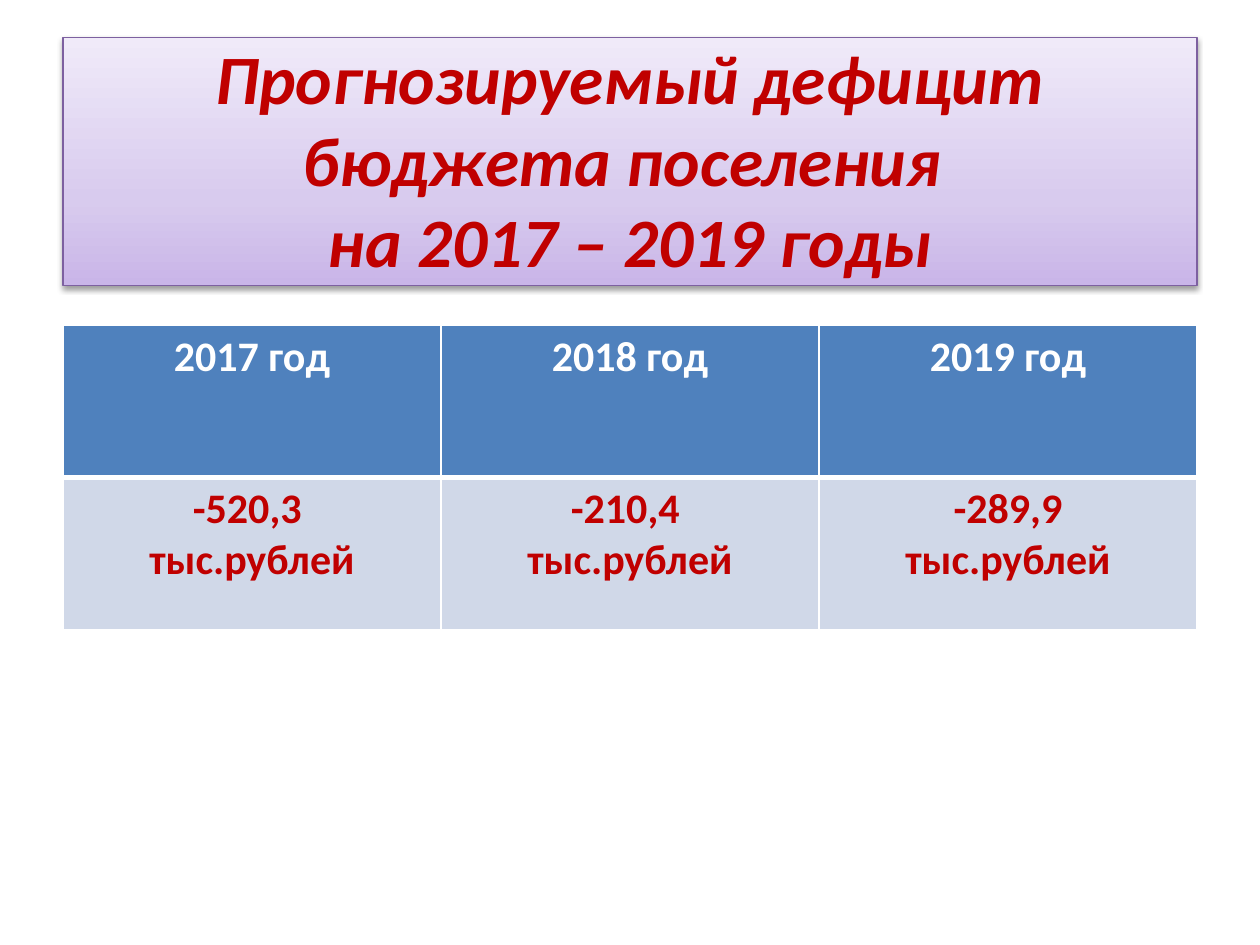
from copy import deepcopy
from dataclasses import dataclass

from lxml import etree
from pptx import Presentation
from pptx import util as u
from pptx.dml.color import RGBColor
from pptx.enum import shapes, text
from pptx.oxml.ns import qn

COLORS = {
    "red": "C00000",
    "white": "FFFFFF",
    "header": "4F81BD",
    "body": "D0D8E8",
    "outline": "7D60A0",
    "shadow": "000000",
}
TITLE_GRADIENT = [(0, "C9B5E8"), (0.35, "D8CBEE"), (1, "F0EAF9")]
FONT = "Calibri"
LEFT, WIDTH = 36, 648
ROW_HEIGHT = 87.1


@dataclass
class TextStyle:
    size: float
    color: str
    italic: bool = False


@dataclass
class RowStyle:
    font: TextStyle
    fill: str
    top: float
    bottom: float


@dataclass
class YearDeficit:
    year: str
    amount: str


HEADER = RowStyle(TextStyle(24, "white"), "header", top=1, bottom=3)
BODY = RowStyle(TextStyle(24, "red"), "body", top=3, bottom=1)
DEFICITS = [
    YearDeficit("2017 год", "-520,3 \nтыс.рублей"),
    YearDeficit("2018 год", "-210,4 \nтыс.рублей"),
    YearDeficit("2019 год", "-289,9\nтыс.рублей"),
]


def rgb(name: str) -> RGBColor:
    return RGBColor.from_string(COLORS[name])


def write(frame, wording: str, style: TextStyle) -> None:
    frame.text = wording
    for para in frame.paragraphs:
        para.alignment = text.PP_ALIGN.CENTER
        for span in para.runs:
            span.font.name = FONT
            span.font.size = u.Pt(style.size)
            span.font.bold = True
            span.font.italic = style.italic
            span.font.color.rgb = rgb(style.color)


def fill_gradient(shape) -> None:
    """Fill upwards through the title's gradient stops."""
    shape.fill.gradient()
    shape.fill.gradient_angle = 90
    stop_list = shape._element.spPr.find(".//" + qn("a:gsLst"))
    stop_list.insert(1, deepcopy(stop_list[0]))
    for stop, (position, color) in zip(shape.fill.gradient_stops, TITLE_GRADIENT):
        stop.position = position
        stop.color.rgb = RGBColor.from_string(color)


def add_shadow(shape) -> None:
    shape.shadow.inherit = False
    effects = shape._element.spPr.find(qn("a:effectLst"))
    outer = etree.SubElement(
        effects, qn("a:outerShdw"), blurRad=str(u.Pt(3.1)), dist=str(u.Pt(1.6)),
        dir="5400000", rotWithShape="0")
    color = etree.SubElement(outer, qn("a:srgbClr"), val=COLORS["shadow"])
    etree.SubElement(color, qn("a:alpha"), val="38000")


def add_title(page, wording: str) -> None:
    box = page.shapes.add_shape(
        shapes.MSO_SHAPE.RECTANGLE, u.Pt(LEFT), u.Pt(21.6), u.Pt(WIDTH), u.Pt(141.8))
    fill_gradient(box)
    box.line.color.rgb = rgb("outline")
    box.line.width = u.Pt(0.75)
    add_shadow(box)
    frame = box.text_frame
    frame.word_wrap = True
    frame.vertical_anchor = text.MSO_ANCHOR.MIDDLE
    write(frame, wording, TextStyle(39.6, "red", italic=True))
    frame.paragraphs[0].line_spacing = 0.98


def add_borders(cell, top: float, bottom: float) -> None:
    properties = cell._tc.get_or_add_tcPr()
    for side, width in (("L", 1), ("R", 1), ("T", top), ("B", bottom)):
        line = etree.SubElement(properties, qn(f"a:ln{side}"), w=str(u.Pt(width)))
        solid = etree.SubElement(line, qn("a:solidFill"))
        etree.SubElement(solid, qn("a:srgbClr"), val=COLORS["white"])


def fill_cell(cell, wording: str, style: RowStyle) -> None:
    write(cell.text_frame, wording, style.font)
    add_borders(cell, style.top, style.bottom)
    cell.fill.solid()
    cell.fill.fore_color.rgb = rgb(style.fill)


def add_deficit_table(page, deficits: list[YearDeficit]) -> None:
    table = page.shapes.add_table(
        2, len(deficits), u.Pt(LEFT), u.Pt(185.8), u.Pt(WIDTH), u.Pt(2 * ROW_HEIGHT)).table
    for column, deficit in enumerate(deficits):
        fill_cell(table.cell(0, column), deficit.year, HEADER)
        fill_cell(table.cell(1, column), deficit.amount, BODY)


def main() -> None:
    deck = Presentation()
    deck.slide_width, deck.slide_height = u.Pt(720), u.Pt(540)
    page = deck.slides.add_slide(deck.slide_layouts[6])
    add_title(page, "Прогнозируемый дефицит бюджета поселения \vна 2017 – 2019 годы")
    add_deficit_table(page, DEFICITS)
    deck.save("out.pptx")


if __name__ == "__main__":
    main()
